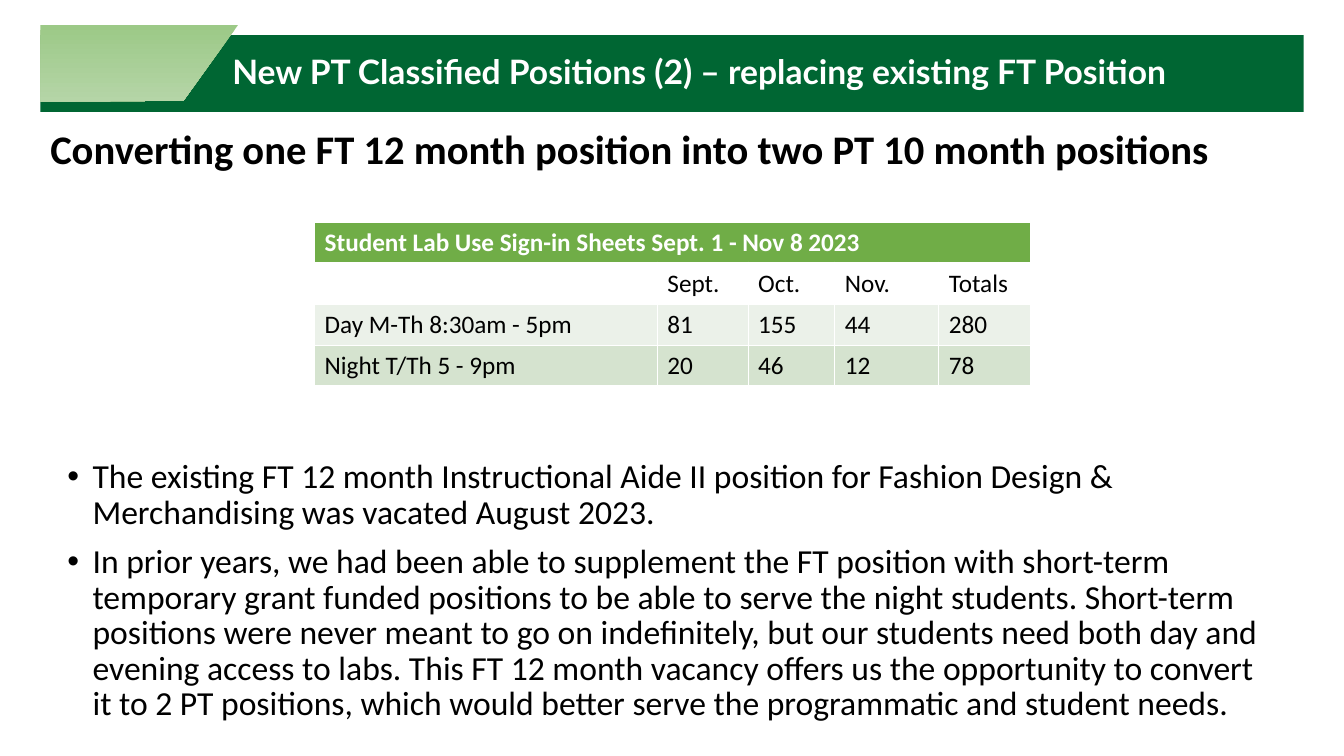
from lxml import etree
from pptx import Presentation
from pptx.dml.color import RGBColor
from pptx.enum.shapes import MSO_SHAPE
from pptx.enum.text import MSO_ANCHOR, PP_ALIGN
from pptx.oxml.ns import qn
from pptx.util import Inches, Pt

RECTANGLE = MSO_SHAPE.RECTANGLE
TOP, MIDDLE = MSO_ANCHOR.TOP, MSO_ANCHOR.MIDDLE
LEFT, CENTER = PP_ALIGN.LEFT, PP_ALIGN.CENTER

THEME = {
    "banner": "006633",
    "tab_top": "9CC987",
    "tab_bottom": "B5D5A7",
    "header": "70AD47",
    "rows": ["FFFFFF", "EBF1E9", "D5E3CF"],
    "white": "FFFFFF",
    "black": "000000",
    "body_font": "Calibri",
    "banner_font": "Lato",
    "title_size": 29,
    "text_size": 24,
    "table_size": 18,
}


def write(frame, texts, size, color=THEME["black"], font=THEME["body_font"], bold=False,
          align=LEFT, anchor=TOP, line_spacing=None, gap=0, bullet=None):
    frame.word_wrap = True
    frame.vertical_anchor = anchor
    for index, text in enumerate(texts):
        para = frame.add_paragraph() if index else frame.paragraphs[0]
        para.alignment = align
        para.line_spacing = line_spacing
        if index:
            para.space_before = Pt(gap)
        if bullet:
            properties = para._p.get_or_add_pPr()
            properties.set("marL", str(Inches(0.25)))
            properties.set("indent", str(-Inches(0.25)))
            etree.SubElement(properties, qn("a:buFont")).set("typeface", "Arial")
            etree.SubElement(properties, qn("a:buChar")).set("char", bullet)
        span = para.add_run()
        span.text = text
        span.font.name = font
        span.font.size = Pt(size)
        span.font.bold = bold
        span.font.color.rgb = RGBColor.from_string(color)


def style_cell(cell, color, bottom_width):
    properties = cell._tc.get_or_add_tcPr()
    for side, width in (("L", 1), ("R", 1), ("T", 1), ("B", bottom_width)):
        border = etree.SubElement(properties, qn(f"a:ln{side}"), w=str(Pt(width)))
        paint = etree.SubElement(border, qn("a:solidFill"))
        etree.SubElement(paint, qn("a:srgbClr"), val=THEME["white"])
    cell.fill.solid()
    cell.fill.fore_color.rgb = RGBColor.from_string(color)


deck = Presentation()
deck.slide_width = Inches(13.33)
deck.slide_height = Inches(7.5)
page = deck.slides.add_slide(deck.slide_layouts[6])

title_box = page.shapes.add_textbox(Inches(0.4), Inches(0.78), Inches(12.02), Inches(1.45))
write(title_box.text_frame,
      ["Converting one FT 12 month position into two PT 10 month positions"],
      THEME["title_size"], bold=True, anchor=MIDDLE, line_spacing=0.9)

bullets = [
    "The existing FT 12 month Instructional Aide II position for Fashion Design & "
    "Merchandising was vacated August 2023.",
    "In prior years, we had been able to supplement the FT position with short-term "
    "temporary grant funded positions to be able to serve the night students. "
    "Short-term positions were never meant to go on indefinitely, but our students "
    "need both day and evening access to labs. This FT 12 month vacancy offers us the "
    "opportunity to convert it to 2 PT positions, which would better serve the "
    "programmatic and student needs.",
]
body_box = page.shapes.add_textbox(Inches(0.57), Inches(4.52), Inches(12.2), Inches(2.98))
write(body_box.text_frame, bullets, THEME["text_size"], line_spacing=0.88, gap=10, bullet="•")

banner = page.shapes.add_shape(RECTANGLE, Inches(0.4), Inches(0.35), Inches(12.53), Inches(0.76))
banner.shadow.inherit = False
banner.fill.solid()
banner.fill.fore_color.rgb = RGBColor.from_string(THEME["banner"])
banner.line.fill.background()

corners = [(Inches(x), Inches(y)) for x, y in ((0.4, 1.01), (1.82, 1), (2.36, 0.25), (0.4, 0.25))]
outline = page.shapes.build_freeform(*corners[0], scale=1.0)
outline.add_line_segments(corners[1:], close=True)
tab = outline.convert_to_shape()
tab.shadow.inherit = False
tab.fill.gradient()
tab.fill.gradient_angle = 270
for stop, color in zip(tab.fill.gradient_stops, (THEME["tab_top"], THEME["tab_bottom"])):
    stop.color.rgb = RGBColor.from_string(color)
tab.line.fill.background()

banner_box = page.shapes.add_textbox(Inches(1.53), Inches(0.44), Inches(10.81), Inches(0.58))
write(banner_box.text_frame,
      ["New PT Classified Positions (2) – replacing existing FT Position"],
      THEME["text_size"], color=THEME["white"], font=THEME["banner_font"], bold=True,
      align=CENTER, anchor=MIDDLE, line_spacing=0.9)

lab_use = [
    ["", "Sept.", "Oct.", "Nov.", "Totals"],
    ["Day M-Th 8:30am - 5pm", "81", "155", "44", "280"],
    ["Night T/Th 5 - 9pm", "20", "46", "12", "78"],
]
column_widths = [3.4, 0.9, 0.86, 1.03, 0.91]
table = page.shapes.add_table(len(lab_use) + 1, len(column_widths), Inches(3.12), Inches(2.21),
                              Inches(7.1), Inches(1.62)).table
table.first_row = False
table.horz_banding = False
for column, width in zip(table.columns, column_widths):
    column.width = Inches(width)

header = table.cell(0, 0)
header.merge(table.cell(0, len(column_widths) - 1))
for cell in table.rows[0].cells:
    style_cell(cell, THEME["header"], 3)
write(header.text_frame, ["Student Lab Use Sign-in Sheets Sept. 1 - Nov 8 2023"],
      THEME["table_size"], color=THEME["white"], bold=True)

for row_index, (values, color) in enumerate(zip(lab_use, THEME["rows"]), start=1):
    for column_index, value in enumerate(values):
        cell = table.cell(row_index, column_index)
        style_cell(cell, color, 1)
        if value:
            write(cell.text_frame, [value], THEME["table_size"])

deck.save("out.pptx")
